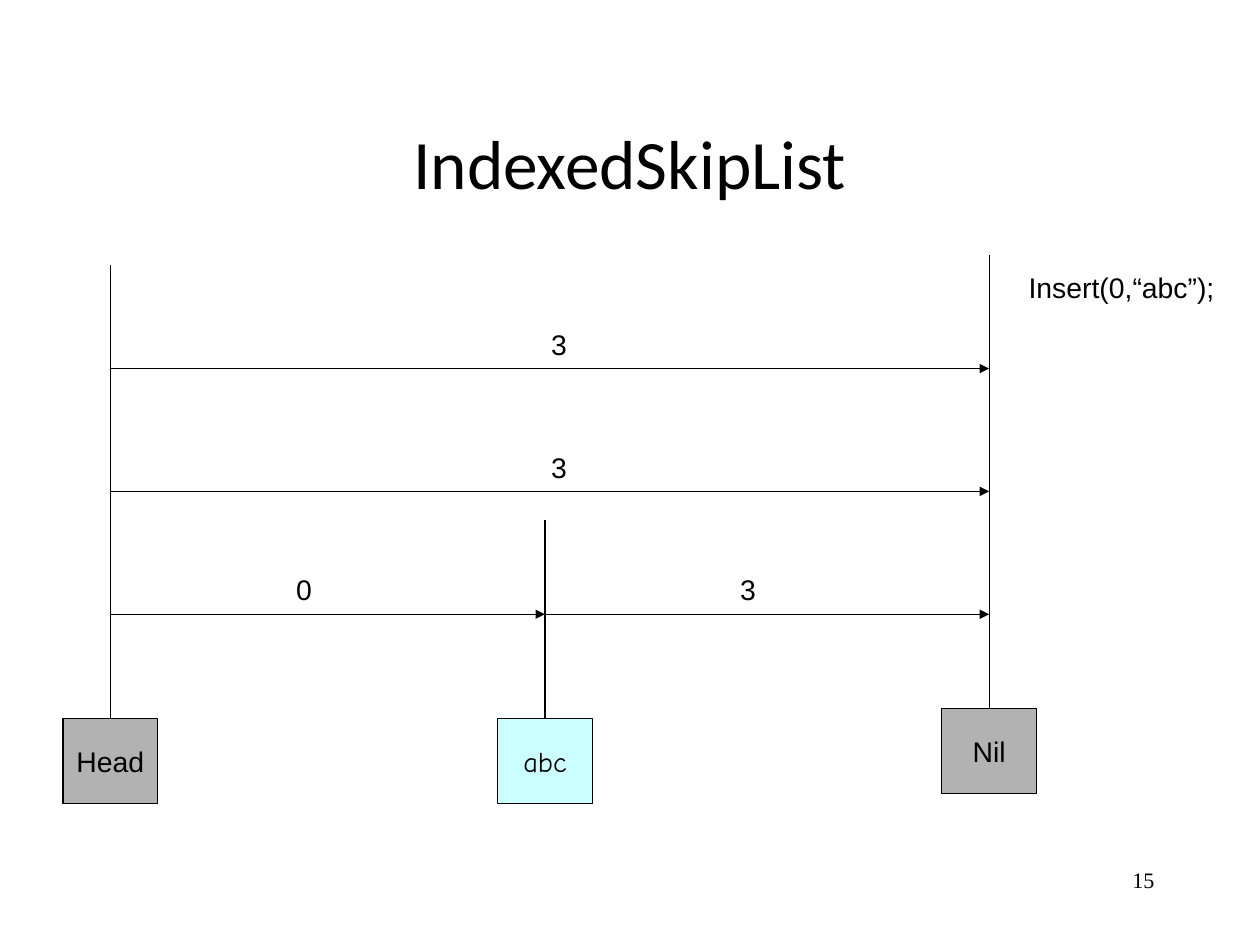
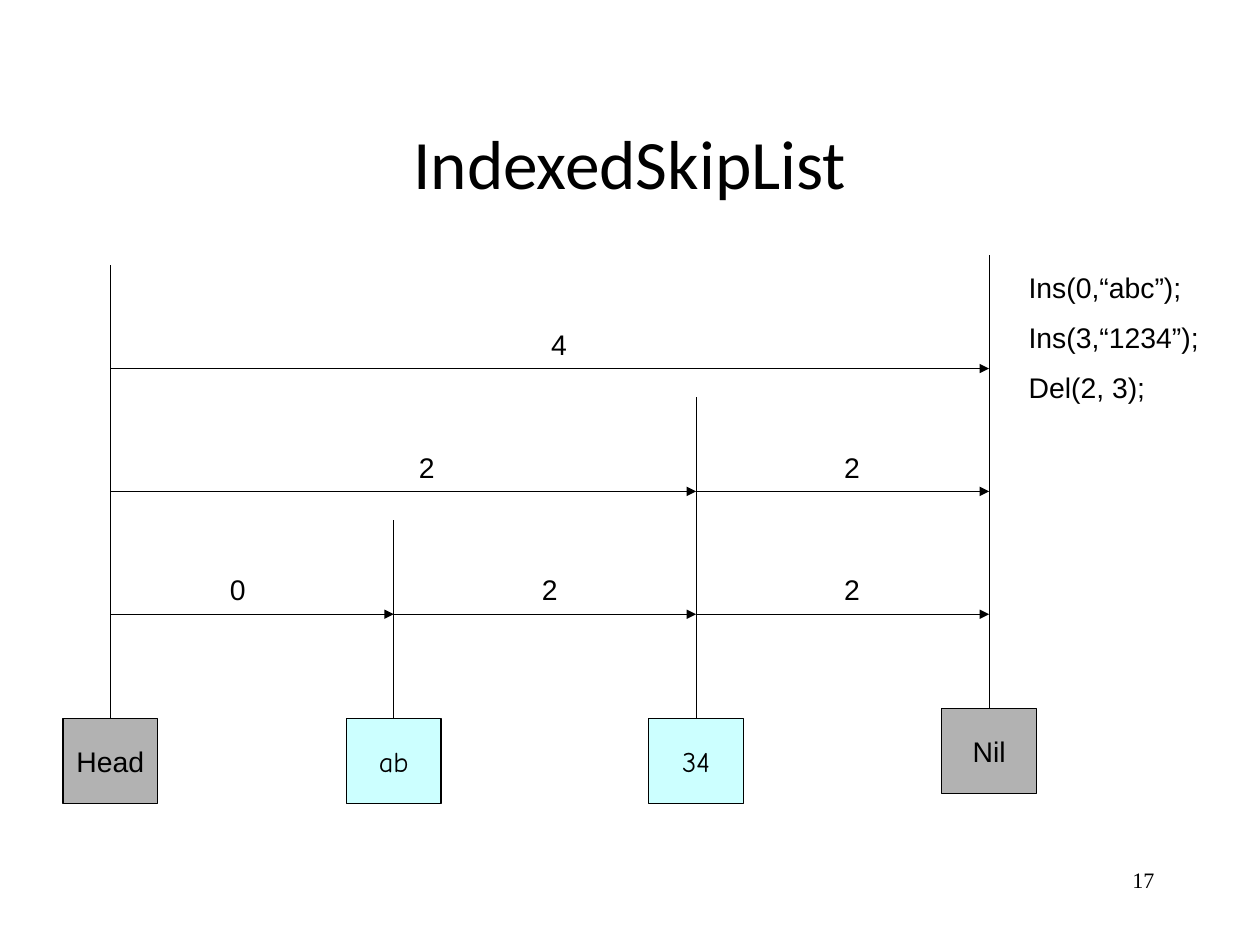
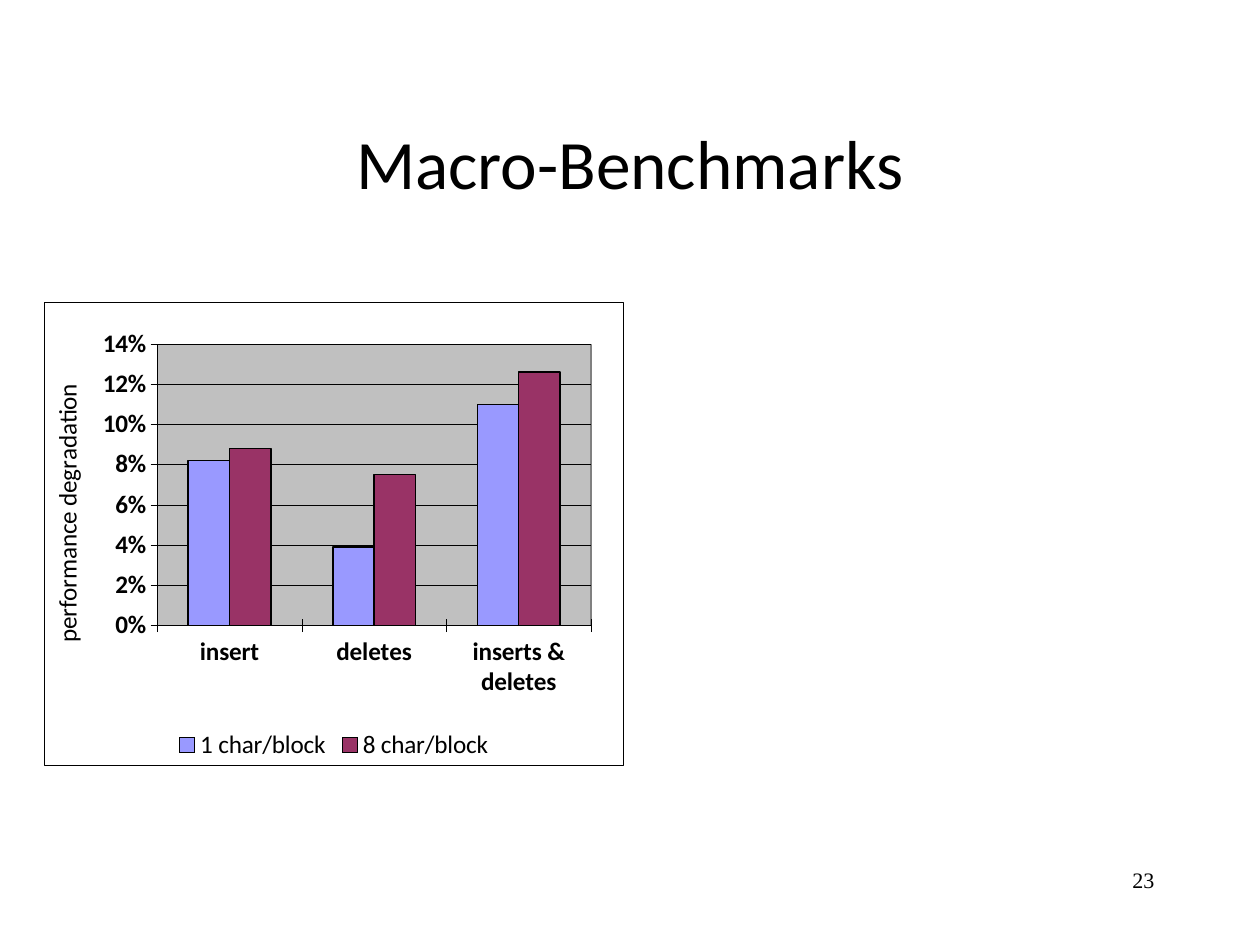
import itertools

import pptx
import pptx.chart.data
import pptx.dml.color
import pptx.enum.chart
import pptx.enum.shapes
import pptx.enum.text
import pptx.oxml
import pptx.oxml.ns
import pptx.util

Pt = pptx.util.Pt
qn = pptx.oxml.ns.qn
ALIGN = pptx.enum.text.PP_ALIGN
ANCHOR = pptx.enum.text.MSO_ANCHOR

COLORS = {
    "ink": "000000", "end": "B2B2B2", "node": "CCFFFF", "paper": "FFFFFF",
    "plot": "C0C0C0", "plot_edge": "808080", "small": "9999FF", "large": "993366",
}
TITLE_FONT, BODY_FONT = "Calibri", "Arial"
NODE_FONT, PAGE_FONT = "Comic Neue", "Times New Roman"

# Skip list geometry, relative to the diagram's left top corner
NODE_W, NODE_H = 60, 54
HEAD_X, NIL_X = 30, 588          # centres of the end towers
NODE_Y, NIL_Y = 294, 288         # tops of the boxes
END_POLE = 288
ROW_TOP, ROW_STEP, ROWS = 72, 78, 3
POLE_BASE = 48


def rgb(name):
    return pptx.dml.color.RGBColor.from_string(COLORS[name])


def style_font(font, name, size, bold=False):
    font.name, font.size, font.bold = name, Pt(size), bold
    font.color.rgb = rgb("ink")


def style_line(line, width, color="ink"):
    line.color.rgb = rgb(color)
    line.width = Pt(width)


def write(sp, lines, font, size, align, anchor=ANCHOR.TOP, wrap=True):
    tf = sp.text_frame
    tf.word_wrap = wrap
    tf.vertical_anchor = anchor
    tf.text = "\n".join(lines)
    for i, p in enumerate(tf.paragraphs):
        p.alignment = align
        if i:
            p.space_before = Pt(10)
        for r in p.runs:
            style_font(r.font, font, size)


def add_text(s, box, lines, font, size, align, anchor=ANCHOR.TOP):
    sp = s.shapes.add_textbox(*map(Pt, box))
    write(sp, lines, font, size, align, anchor)


def add_line(s, x1, y1, x2, y2, arrow=False):
    c = s.shapes.add_connector(pptx.enum.shapes.MSO_CONNECTOR.STRAIGHT,
                               Pt(x1), Pt(y1), Pt(x2), Pt(y2))
    style_line(c.line, 0.75)
    if arrow:
        tail = c.line._get_or_add_ln().makeelement(qn("a:tailEnd"), {"type": "triangle"})
        c.line._get_or_add_ln().append(tail)
    spPr = c._element.spPr
    spPr.append(spPr.makeelement(qn("a:effectLst"), {}))
    return c


def add_slide(prs, title, number):
    """Blank slide with the shared title and page number."""
    s = prs.slides.add_slide(prs.slide_layouts[6])
    add_text(s, (60, 53, 680, 100), [title], TITLE_FONT, 44, ALIGN.CENTER, ANCHOR.MIDDLE)
    add_text(s, (573, 546.5, 167, 40), [str(number)], PAGE_FONT, 14, ALIGN.RIGHT)
    return s


def add_tower(s, x, y, pole, text, fill, font):
    """Node box centred on x, with a pole rising from its top."""
    sp = s.shapes.add_shape(pptx.enum.shapes.MSO_SHAPE.RECTANGLE,
                            Pt(x - NODE_W / 2), Pt(y), Pt(NODE_W), Pt(NODE_H))
    sp.shadow.inherit = False
    sp.fill.solid()
    sp.fill.fore_color.rgb = rgb(fill)
    style_line(sp.line, 0.75)
    write(sp, [text], font, 18, ALIGN.CENTER, ANCHOR.MIDDLE, wrap=False)
    add_line(s, x, y, x, y - pole).begin_connect(sp, 0)


def add_skip_list(s, left, top, towers, rows, calls):
    """towers: (text, centre, levels); rows, top first: (label, label centre)."""
    # Towers
    add_tower(s, left + HEAD_X, top + NODE_Y, END_POLE, "Head", "end", BODY_FONT)
    add_tower(s, left + NIL_X, top + NIL_Y, END_POLE, "Nil", "end", BODY_FONT)
    for text, x, levels in towers:
        add_tower(s, left + x, top + NODE_Y, POLE_BASE + levels * ROW_STEP,
                  text, "node", NODE_FONT)
    # Links between the towers that reach each row, with their distances
    for i, labels in enumerate(rows):
        y = top + ROW_TOP + i * ROW_STEP
        stops = [HEAD_X] + [x for _, x, n in towers if n >= ROWS - i] + [NIL_X]
        for (x1, x2), (text, x) in zip(itertools.pairwise(stops), labels):
            add_line(s, left + x1, y, left + x2, y, arrow=True)
            add_text(s, (left + x - 21, y - 30, 42, 29), [text],
                     BODY_FONT, 18, ALIGN.CENTER)
    # Calls that produced this list
    add_text(s, (left + 606, top + 6, 154, 29 + 31 * (len(calls) - 1)), calls,
             BODY_FONT, 18, ALIGN.LEFT)


def add_benchmark_chart(s, left, top, width, height):
    data = pptx.chart.data.CategoryChartData(number_format="0%")
    data.categories = ["insert", "deletes", "inserts & deletes"]
    data.add_series("1 char/block", (0.082, 0.039, 0.11))
    data.add_series("8 char/block", (0.088, 0.075, 0.126))
    chart = s.shapes.add_chart(pptx.enum.chart.XL_CHART_TYPE.COLUMN_CLUSTERED,
                               Pt(left), Pt(top), Pt(width), Pt(height), data).chart
    style_font(chart.font, TITLE_FONT, 14, True)
    chart.has_title = False
    # Legend
    chart.has_legend = True
    chart.legend.position = pptx.enum.chart.XL_LEGEND_POSITION.BOTTOM
    chart.legend.include_in_layout = False
    style_font(chart.legend.font, TITLE_FONT, 16)
    # Columns
    plot = chart.plots[0]
    plot.gap_width, plot.overlap, plot.vary_by_categories = 150, 0, False
    for series, color in zip(plot.series, ("small", "large")):
        series.format.fill.solid()
        series.format.fill.fore_color.rgb = rgb(color)
        style_line(series.format.line, 1)
    # Axes
    for axis in (chart.category_axis, chart.value_axis):
        axis.major_tick_mark = pptx.enum.chart.XL_TICK_MARK.CROSS
        style_font(axis.tick_labels.font, TITLE_FONT, 16, True)
        style_line(axis.format.line, 0.25)
    axis = chart.value_axis
    axis.minimum_scale, axis.maximum_scale, axis.major_unit = 0, 0.14, 0.02
    axis.tick_labels.number_format = "0%"
    axis.tick_labels.number_format_is_linked = False
    axis.has_major_gridlines = True
    style_line(axis.major_gridlines.format.line, 0.25)
    axis.axis_title.text_frame.text = "performance degradation"
    style_font(axis.axis_title.text_frame.paragraphs[0].runs[0].font, TITLE_FONT, 16)
    # Plot position and backgrounds
    space = chart._chartSpace
    area = space.find(".//" + qn("c:plotArea"))
    for old in area.findall(qn("c:layout")):
        area.remove(old)
    area.insert(0, plot_layout(0.195, 0.09, 0.749, 0.608))
    area.append(background("plot", "plot_edge", 0.75))
    space.find(qn("c:chart")).addnext(background("paper", "ink", 0.25))


def plot_layout(x, y, w, h):
    sizes = "".join(f'<c:{k} val="{v}"/>' for k, v in zip("xywh", (x, y, w, h)))
    return pptx.oxml.parse_xml(
        f'<c:layout {pptx.oxml.ns.nsdecls("c")}><c:manualLayout>'
        '<c:layoutTarget val="inner"/><c:xMode val="edge"/><c:yMode val="edge"/>'
        f'{sizes}</c:manualLayout></c:layout>')


def background(fill, line, width):
    def solid(name):
        return f'<a:solidFill><a:srgbClr val="{COLORS[name]}"/></a:solidFill>'
    return pptx.oxml.parse_xml(
        f'<c:spPr {pptx.oxml.ns.nsdecls("c", "a")}>{solid(fill)}'
        f'<a:ln w="{int(Pt(width))}">{solid(line)}</a:ln></c:spPr>')


def main():
    prs = pptx.Presentation()
    prs.slide_width, prs.slide_height = Pt(800), Pt(600)

    # Insert
    s = add_slide(prs, "IndexedSkipList", 15)
    add_skip_list(s, 40, 162, [("abc", 306, 1)],
                  [[("3", 315)], [("3", 315)], [("0", 153), ("3", 435)]],
                  ["Insert(0,“abc”);"])

    # Insert and delete
    s = add_slide(prs, "IndexedSkipList", 17)
    add_skip_list(s, 40, 162, [("ab", 210, 1), ("34", 402, 2)],
                  [[("4", 315)], [("2", 231), ("2", 501)],
                   [("0", 111), ("2", 309), ("2", 501)]],
                  ["Ins(0,“abc”);", "Ins(3,“1234”);", "Del(2, 3);"])

    # Benchmarks
    s = add_slide(prs, "Macro-Benchmarks", 23)
    add_benchmark_chart(s, 28, 192, 368, 294)

    prs.save("out.pptx")


if __name__ == "__main__":
    main()
